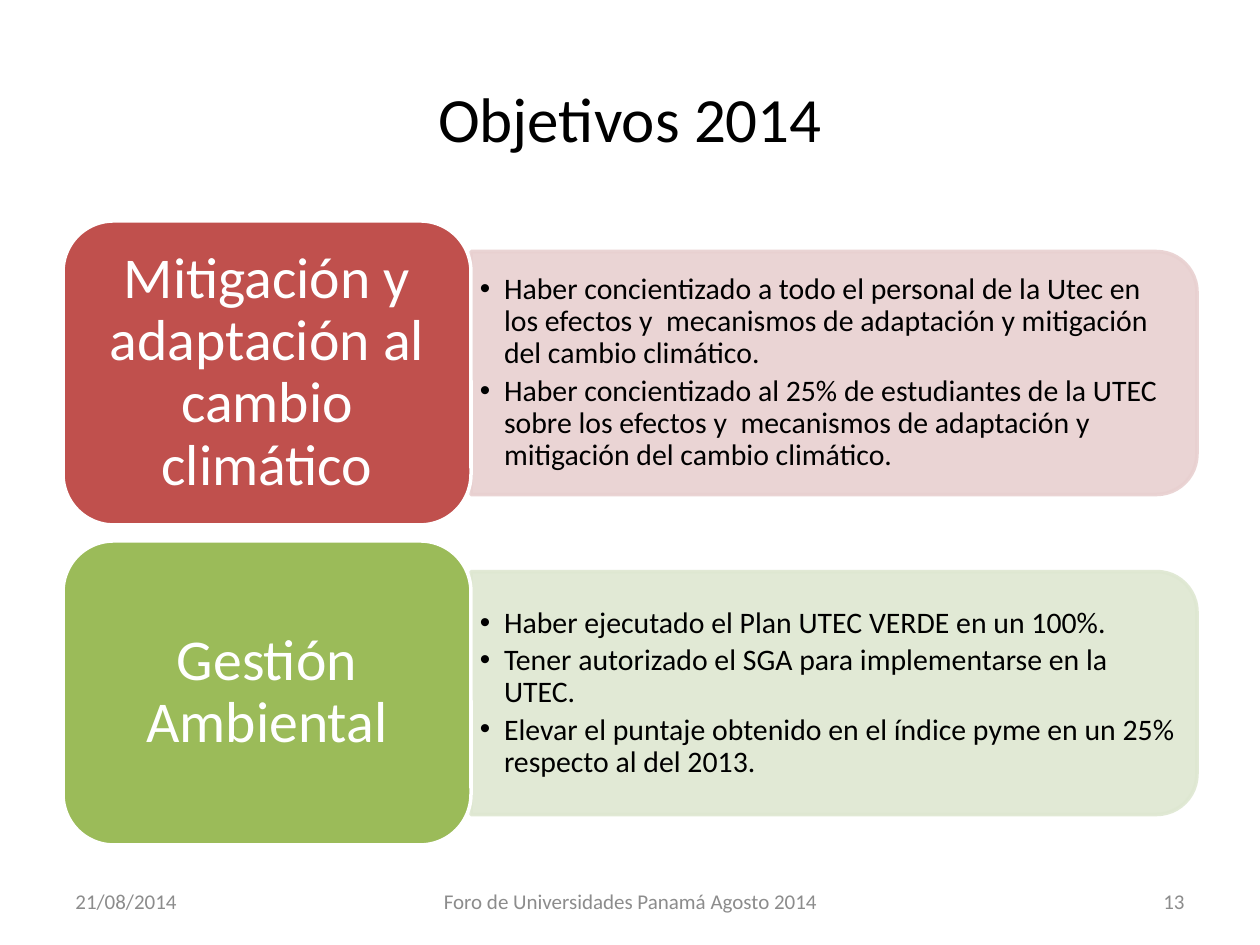
from pptx import Presentation
from pptx.dml.color import RGBColor
from pptx.enum.shapes import MSO_SHAPE
from pptx.enum.text import MSO_ANCHOR, MSO_AUTO_SIZE, PP_ALIGN
from pptx.oxml.ns import qn
from pptx.util import Pt
from lxml import etree

LEFT, CENTER, RIGHT = PP_ALIGN.LEFT, PP_ALIGN.CENTER, PP_ALIGN.RIGHT
ROUND_RECT = MSO_SHAPE.ROUNDED_RECTANGLE
ROUND_TOP = MSO_SHAPE.ROUND_2_SAME_RECTANGLE

# Content
TITLE = "Objetivos 2014"
GOALS = [
    {"label": "Mitigación y adaptación al cambio climático",
     "color": "C0504D", "tint": "E8D0D0",
     "points": [
         "Haber concientizado a todo el personal de la Utec en los efectos y  "
         "mecanismos de adaptación y mitigación del cambio climático.",
         "Haber concientizado al 25% de estudiantes de la UTEC sobre los efectos y  "
         "mecanismos de adaptación y mitigación del cambio climático."]},
    {"label": "Gestión Ambiental",
     "color": "9BBB59", "tint": "DEE7D1",
     "points": [
         "Haber ejecutado el Plan UTEC VERDE en un 100%.",
         "Tener autorizado el SGA para implementarse en la UTEC.",
         "Elevar el puntaje obtenido en el índice pyme en un 25% respecto al del 2013."]},
]
# Text, left, width, alignment
FOOTERS = [
    ("21/08/2014", 63, 294, LEFT),
    ("Foro de Universidades Panamá Agosto 2014", 431, 399, CENTER),
    ("13", 903, 294, RIGHT),
]

THEME = {
    "font": "Calibri", "text": "000000", "light": "FFFFFF", "muted": "8C8C8C",
    "title": 36, "label": 33, "point": 17, "footer": 12, "line": 2,
}

# Layout in px
SLIDE_W, SLIDE_H = 1260, 945
TITLE_BOX = (63, 38, 1134, 158)
FOOTER_TOP, FOOTER_H = 876, 50
LABEL_LEFT, LABEL_TOP, LABEL_W, LABEL_H = 63, 221, 408, 304
ROW_PITCH = 320
PANEL_W, PANEL_H = 726, 243
LIST_W, LIST_H = 714, 219
BULLET_INDENT = 24


def px(length):
    return round(length * 914400 / 126)


def rgb(color):
    return RGBColor.from_string(color)


def place(shape, left, top, width, height):
    shape.left, shape.top = px(left), px(top)
    shape.width, shape.height = px(width), px(height)


def write(shape, texts, size, color, align, insets=None, spacing=None, after=0):
    frame = shape.text_frame
    frame.word_wrap = True
    frame.auto_size = MSO_AUTO_SIZE.NONE
    frame.vertical_anchor = MSO_ANCHOR.MIDDLE
    if insets:
        frame.margin_left = frame.margin_right = px(insets[0])
        frame.margin_top = frame.margin_bottom = px(insets[1])
    frame.text = "\n".join(texts)
    for paragraph in frame.paragraphs:
        paragraph.alignment = align
        paragraph.line_spacing = spacing
        paragraph.space_before = Pt(0)
        paragraph.space_after = Pt(after)
        paragraph.font.name = THEME["font"]
        paragraph.font.size = Pt(size)
        paragraph.font.color.rgb = rgb(color)


def add_block(slide, kind, box, fill, line):
    shape = slide.shapes.add_shape(kind, *map(px, box))
    shape.shadow.inherit = False
    shape.fill.solid()
    shape.fill.fore_color.rgb = rgb(fill)
    shape.line.color.rgb = rgb(line)
    shape.line.width = Pt(THEME["line"])
    return shape


def add_goal(slide, goal, points, top):
    middle = top + LABEL_H / 2
    list_left = LABEL_LEFT + LABEL_W

    # Tinted panel, turned so its rounded side faces right
    center = list_left + PANEL_W / 2
    panel_box = (center - PANEL_H / 2, middle - PANEL_W / 2, PANEL_H, PANEL_W)
    panel = add_block(slide, ROUND_TOP, panel_box, goal["tint"], goal["tint"])
    panel.rotation = 90
    for color in panel.element.spPr.iter(qn("a:srgbClr")):
        etree.SubElement(color, qn("a:alpha"), val="90000")

    # Bulleted list, brought in front of the panel
    place(points, list_left, middle - LIST_H / 2, LIST_W, LIST_H)
    write(points, goal["points"], THEME["point"], THEME["text"], LEFT,
          insets=(9, 5), spacing=0.9, after=3)
    for paragraph in points.text_frame.paragraphs:
        properties = paragraph._p.get_or_add_pPr()
        properties.set("marL", str(px(BULLET_INDENT)))
        properties.set("indent", str(-px(BULLET_INDENT)))
    panel.element.addnext(points.element)

    # Label
    label = add_block(slide, ROUND_RECT, (LABEL_LEFT, top, LABEL_W, LABEL_H),
                      goal["color"], THEME["light"])
    write(label, [goal["label"]], THEME["label"], THEME["light"], CENTER,
          insets=(18, 9), spacing=0.9)


def main():
    presentation = Presentation()
    presentation.slide_width, presentation.slide_height = px(SLIDE_W), px(SLIDE_H)
    two_content = presentation.slide_layouts[3]
    slide = presentation.slides.add_slide(two_content)

    # Title
    title = slide.shapes.title
    place(title, *TITLE_BOX)
    write(title, [TITLE], THEME["title"], THEME["text"], CENTER)

    # Goals, one row each
    lists = [slide.placeholders[1], slide.placeholders[2]]
    for row, (goal, points) in enumerate(zip(GOALS, lists)):
        add_goal(slide, goal, points, LABEL_TOP + row * ROW_PITCH)

    # Footers
    for text, left, width, align in FOOTERS:
        footer = slide.shapes.add_textbox(px(left), px(FOOTER_TOP), px(width), px(FOOTER_H))
        write(footer, [text], THEME["footer"], THEME["muted"], align)

    presentation.save("out.pptx")


if __name__ == "__main__":
    main()
